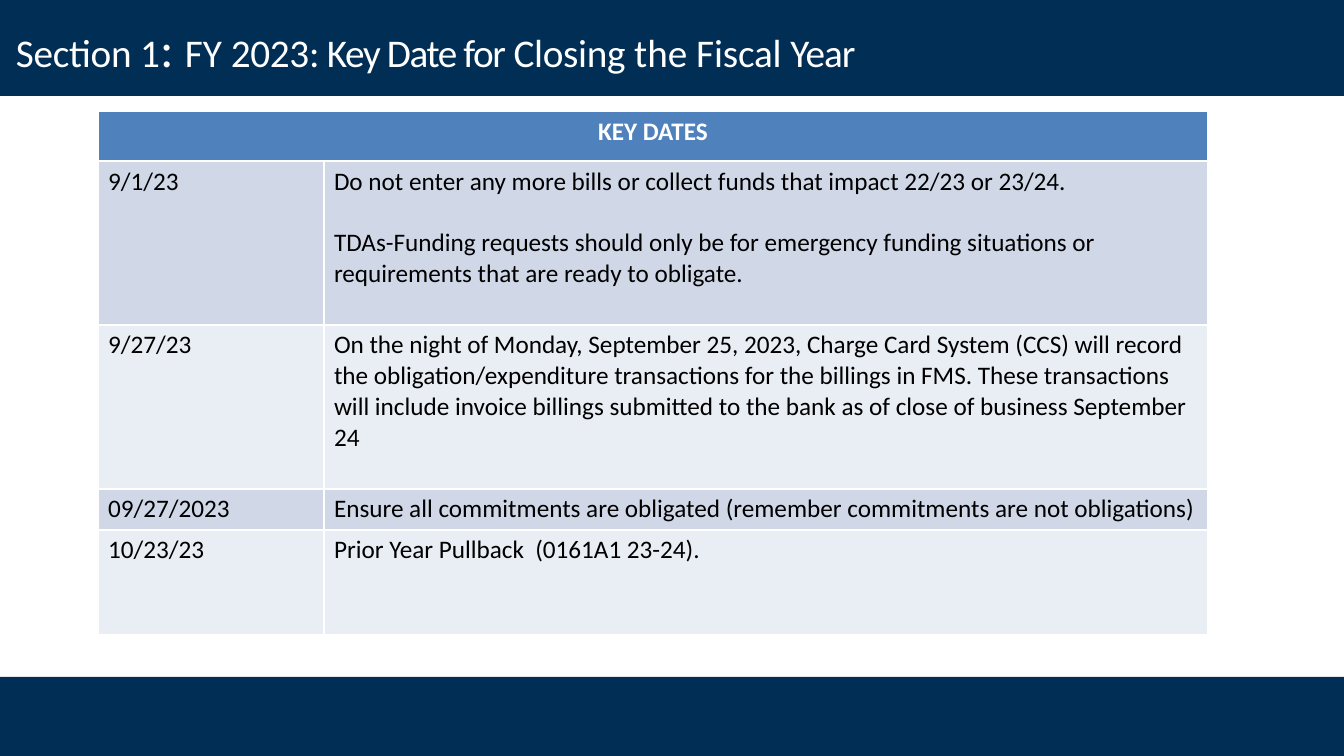
from pptx import Presentation
from pptx.dml.color import RGBColor
from pptx.enum.shapes import MSO_SHAPE
from pptx.enum.text import PP_ALIGN
from pptx.util import Pt

# Content: title runs as (text, size, letter spacing in points)
TITLE = [
    ("Section ", 28, -0.2), ("1", 28, 0), (": ", 36, 0), ("FY ", 28, 0),
    ("2023:", 28, -0.2), (" Key Date for ", 28, -1), ("Closing ", 28, -0.2),
    ("the ", 28, 0), ("Fiscal ", 28, -0.1), ("Year", 28, -0.7),
]
HEADER = "KEY DATES"
# Each row: date, then paragraphs as (text, space before in points)
DATES = [
    ("9/1/23", [
        ("Do not enter any more bills or collect funds that impact 22/23 or 23/24.", 0),
        ("TDAs-Funding requests should only be for emergency funding situations or", 22),
        ("requirements that are ready to obligate.", 0),
    ]),
    ("9/27/23", [
        ("On the night of Monday, September 25, 2023, Charge Card System (CCS) will record "
         "the obligation/expenditure transactions for the billings in FMS. These transactions "
         "will include invoice billings submitted to the bank as of close of business "
         "September 24", 0),
    ]),
    ("09/27/2023", [
        ("Ensure all commitments are obligated (remember commitments are not obligations)", 0),
    ]),
    ("10/23/23", [("Prior Year Pullback  (0161A1 23-24).", 0)]),
]

# Layout in px
PX = 914400 / 100.8
WIDTH, HEIGHT = 1344, 756
BANDS = [(0, 96), (677, 79)]
TITLE_BOX = (16, 17, 1282, 62)
TABLE_LEFT, TABLE_TOP = 98, 111
COLS = [226, 884]
ROWS = [50, 164, 164, 41, 105]

NAVY = RGBColor(0x00, 0x2E, 0x55)
BLUE = RGBColor(0x4F, 0x81, 0xBD)
WHITE = RGBColor(0xFF, 0xFF, 0xFF)
BLACK = RGBColor(0x00, 0x00, 0x00)
STRIPES = [RGBColor(0xD0, 0xD8, 0xE8), RGBColor(0xE9, 0xED, 0xF4)]


def emu(*lengths):
    return [round(n * PX) for n in lengths]


def add_text(p, text, size=18, color=BLACK, bold=False, spacing=0):
    r = p.add_run()
    r.text = text
    r.font.name = "Calibri"
    r.font.size = Pt(size)
    r.font.bold = bold
    r.font.color.rgb = color
    if spacing:
        r.font._element.set("spc", str(round(spacing * 100)))


def fill_cell(cell, color):
    cell.fill.solid()
    cell.fill.fore_color.rgb = color


prs = Presentation()
prs.slide_width, prs.slide_height = emu(WIDTH, HEIGHT)
s = prs.slides.add_slide(prs.slide_layouts[6])

# Bands at top and bottom
for top, height in BANDS:
    sp = s.shapes.add_shape(MSO_SHAPE.RECTANGLE, *emu(0, top, WIDTH, height))
    sp.shadow.inherit = False
    sp.fill.solid()
    sp.fill.fore_color.rgb = NAVY
    sp.line.fill.background()

# Title
tf = s.shapes.add_textbox(*emu(*TITLE_BOX)).text_frame
tf.word_wrap = True
tf.margin_left = tf.margin_top = tf.margin_right = tf.margin_bottom = 0
for text, size, spacing in TITLE:
    add_text(tf.paragraphs[0], text, size=size, color=WHITE, spacing=spacing)

# Table of key dates
table = s.shapes.add_table(
    len(ROWS), len(COLS), *emu(TABLE_LEFT, TABLE_TOP, sum(COLS), sum(ROWS))).table
table.horz_banding = False
for col, width in zip(table.columns, emu(*COLS)):
    col.width = width
for row, height in zip(table.rows, emu(*ROWS)):
    row.height = height

head = table.cell(0, 0)
head.merge(table.cell(0, 1))
fill_cell(head, BLUE)
p = head.text_frame.paragraphs[0]
p.alignment = PP_ALIGN.CENTER
add_text(p, HEADER, color=WHITE, bold=True)

for i, (date, paragraphs) in enumerate(DATES):
    for j, lines in enumerate([[(date, 0)], paragraphs]):
        cell = table.cell(i + 1, j)
        fill_cell(cell, STRIPES[i % 2])
        tf = cell.text_frame
        for k, (text, before) in enumerate(lines):
            p = tf.add_paragraph() if k else tf.paragraphs[0]
            if before:
                p.space_before = Pt(before)
            add_text(p, text)

prs.save("out.pptx")
